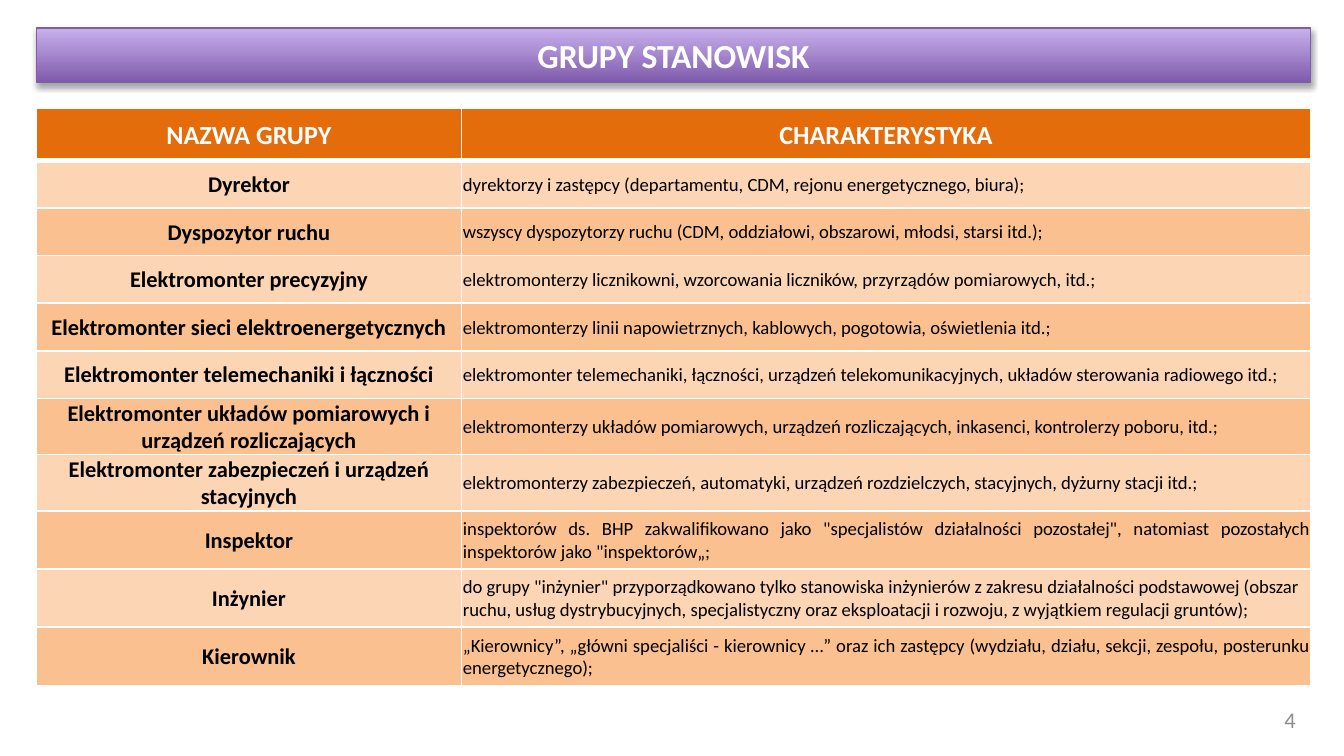
from lxml.etree import SubElement
from pptx import Presentation
from pptx.dml.color import RGBColor
from pptx.enum.text import MSO_ANCHOR, PP_ALIGN
from pptx.oxml.ns import qn
from pptx.util import Cm, Pt

COLORS = {
    "white": "FFFFFF", "black": "000000", "gray": "8C8C8C",
    "header": "E46C0A", "light": "FCD5B5", "dark": "FAC090",
    "violet": "7F5BAB", "lilac": "C8B0ED", "outline": "7D60A0",
}
LEFT, WIDTH = 0.69, 24.08
COLUMNS = [8.03, 16.05]
HEADER = ("NAZWA GRUPY", "CHARAKTERYSTYKA")
JUSTIFIED = {"Inspektor", "Kierownik"}

# Group name, description, row height in cm
GROUPS = [
    ("Dyrektor",
     "dyrektorzy i zastępcy (departamentu, CDM, rejonu energetycznego, biura);", 0.9),
    ("Dyspozytor ruchu",
     "wszyscy dyspozytorzy ruchu (CDM, oddziałowi, obszarowi, młodsi, starsi itd.);", 0.9),
    ("Elektromonter precyzyjny",
     "elektromonterzy licznikowni, wzorcowania liczników, przyrządów pomiarowych, itd.;", 0.9),
    ("Elektromonter sieci elektroenergetycznych",
     "elektromonterzy linii napowietrznych, kablowych, pogotowia, oświetlenia itd.;", 0.9),
    ("Elektromonter telemechaniki i łączności",
     "elektromonter telemechaniki, łączności, urządzeń telekomunikacyjnych, "
     "układów sterowania radiowego itd.;", 0.9),
    ("Elektromonter układów pomiarowych i urządzeń rozliczających",
     "elektromonterzy układów pomiarowych, urządzeń rozliczających, inkasenci, "
     "kontrolerzy poboru, itd.;", 1.06),
    ("Elektromonter zabezpieczeń i urządzeń stacyjnych",
     "elektromonterzy zabezpieczeń, automatyki, urządzeń rozdzielczych, stacyjnych, "
     "dyżurny stacji itd.;", 1.06),
    ("Inspektor",
     'inspektorów ds. BHP zakwalifikowano jako "specjalistów działalności pozostałej", '
     'natomiast pozostałych inspektorów jako "inspektorów„;', 1.1),
    ("Inżynier",
     'do grupy "inżynier" przyporządkowano tylko stanowiska inżynierów z zakresu '
     "działalności podstawowej (obszar ruchu, usług dystrybucyjnych, specjalistyczny "
     "oraz eksploatacji i rozwoju, z wyjątkiem regulacji gruntów);", 1.1),
    ("Kierownik",
     "„Kierownicy”, „główni specjaliści - kierownicy …” oraz ich zastępcy "
     "(wydziału, działu, sekcji, zespołu, posterunku energetycznego);", 1.1),
]


def rgb(name):
    return RGBColor.from_string(COLORS[name])


class SlideBuilder:
    font = "Calibri"

    def __init__(self, page):
        self.page = page

    def fill_text(self, frame, text, size, color, bold=False, align=PP_ALIGN.LEFT):
        frame.word_wrap = True
        para = frame.paragraphs[0]
        para.text = text
        para.alignment = align
        para.font.name = self.font
        para.font.size = Pt(size)
        para.font.bold = bold
        para.font.color.rgb = rgb(color)

    def title(self, text, left, top, width, height):
        bar = self.page.shapes.title
        bar.left, bar.top = Cm(left), Cm(top)
        bar.width, bar.height = Cm(width), Cm(height)
        bar.fill.gradient()
        bar.fill.gradient_angle = 90
        for stop, color in zip(bar.fill.gradient_stops, ("violet", "lilac")):
            stop.color.rgb = rgb(color)
        bar.line.color.rgb = rgb("outline")
        bar.line.width = Pt(0.75)
        self.shadow(bar)
        bar.text_frame.vertical_anchor = MSO_ANCHOR.MIDDLE
        self.fill_text(bar.text_frame, text, 18, "white", True, PP_ALIGN.CENTER)

    def shadow(self, shape):
        effects = SubElement(shape.element.spPr, qn("a:effectLst"))
        outer = SubElement(effects, qn("a:outerShdw"), blurRad=str(Pt(3.1)),
                           dist=str(Pt(1.8)), dir="5400000", rotWithShape="0")
        color = SubElement(outer, qn("a:srgbClr"), val=COLORS["black"])
        SubElement(color, qn("a:alpha"), val="35000")

    def text(self, text, left, top, width, height, size, color, align):
        box = self.page.shapes.add_textbox(Cm(left), Cm(top), Cm(width), Cm(height))
        box.text_frame.vertical_anchor = MSO_ANCHOR.MIDDLE
        self.fill_text(box.text_frame, text, size, color, align=align)

    def table(self, left, top, columns, heights):
        frame = self.page.shapes.add_table(
            len(heights), len(columns), Cm(left), Cm(top),
            Cm(sum(columns)), Cm(sum(heights)))
        for column, width in zip(frame.table.columns, columns):
            column.width = Cm(width)
        for row, height in zip(frame.table.rows, heights):
            row.height = Cm(height)
        return frame.table

    def cell(self, cell, text, size, color, fill, bold, align, top=1, bottom=1):
        properties = cell._tc.get_or_add_tcPr()
        for side, width in (("L", 1), ("R", 1), ("T", top), ("B", bottom)):
            line = SubElement(properties, qn(f"a:ln{side}"), w=str(Pt(width)))
            solid = SubElement(line, qn("a:solidFill"))
            SubElement(solid, qn("a:srgbClr"), val=COLORS["white"])
        cell.fill.solid()
        cell.fill.fore_color.rgb = rgb(fill)
        cell.vertical_anchor = MSO_ANCHOR.MIDDLE
        cell.margin_left = cell.margin_right = cell.margin_top = Cm(0.03)
        cell.margin_bottom = 0
        self.fill_text(cell.text_frame, text, size, color, bold, align)


def main():
    deck = Presentation()
    deck.slide_width, deck.slide_height = Cm(25.4), Cm(14.29)
    builder = SlideBuilder(deck.slides.add_slide(deck.slide_layouts[5]))

    # Title bar
    builder.title("GRUPY STANOWISK", LEFT, 0.53, WIDTH, 1.03)

    # Table of job groups
    table = builder.table(LEFT, 2.05, COLUMNS, [0.98] + [group[2] for group in GROUPS])
    for column, text in enumerate(HEADER):
        builder.cell(table.cell(0, column), text, 14, "white", "header", True,
                     PP_ALIGN.CENTER, bottom=3)
    for row, (name, description, _) in enumerate(GROUPS, 1):
        fill = "light" if row % 2 else "dark"
        top = 3 if row == 1 else 1
        align = PP_ALIGN.JUSTIFY if name in JUSTIFIED else PP_ALIGN.LEFT
        builder.cell(table.cell(row, 0), name, 12, "black", fill, True,
                     PP_ALIGN.CENTER, top)
        builder.cell(table.cell(row, 1), description, 10, "black", fill, False, align, top)

    # Page number
    builder.text("4", 17.58, 13.23, 7.16, 0.76, 12, "gray", PP_ALIGN.RIGHT)

    deck.save("out.pptx")


if __name__ == "__main__":
    main()
